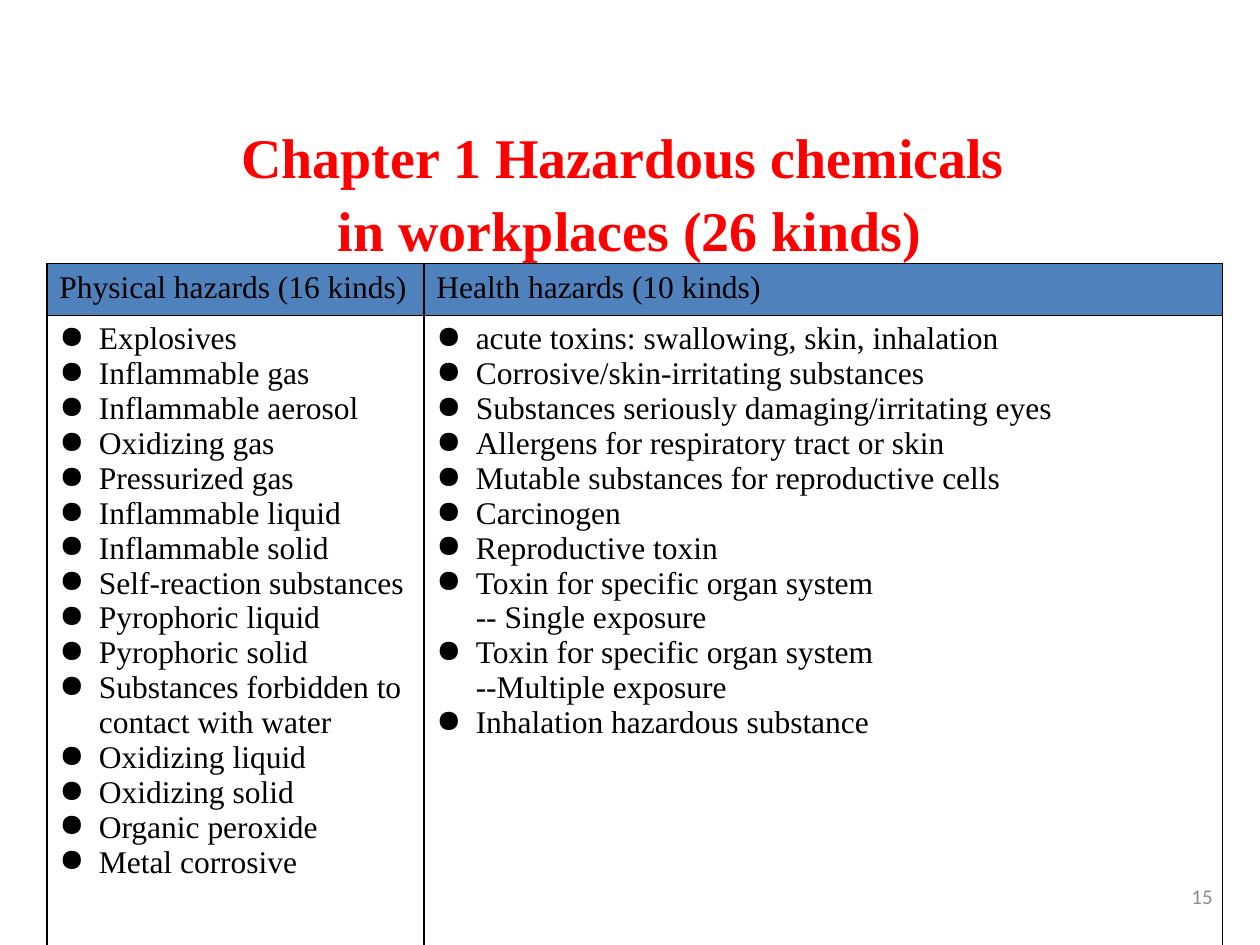
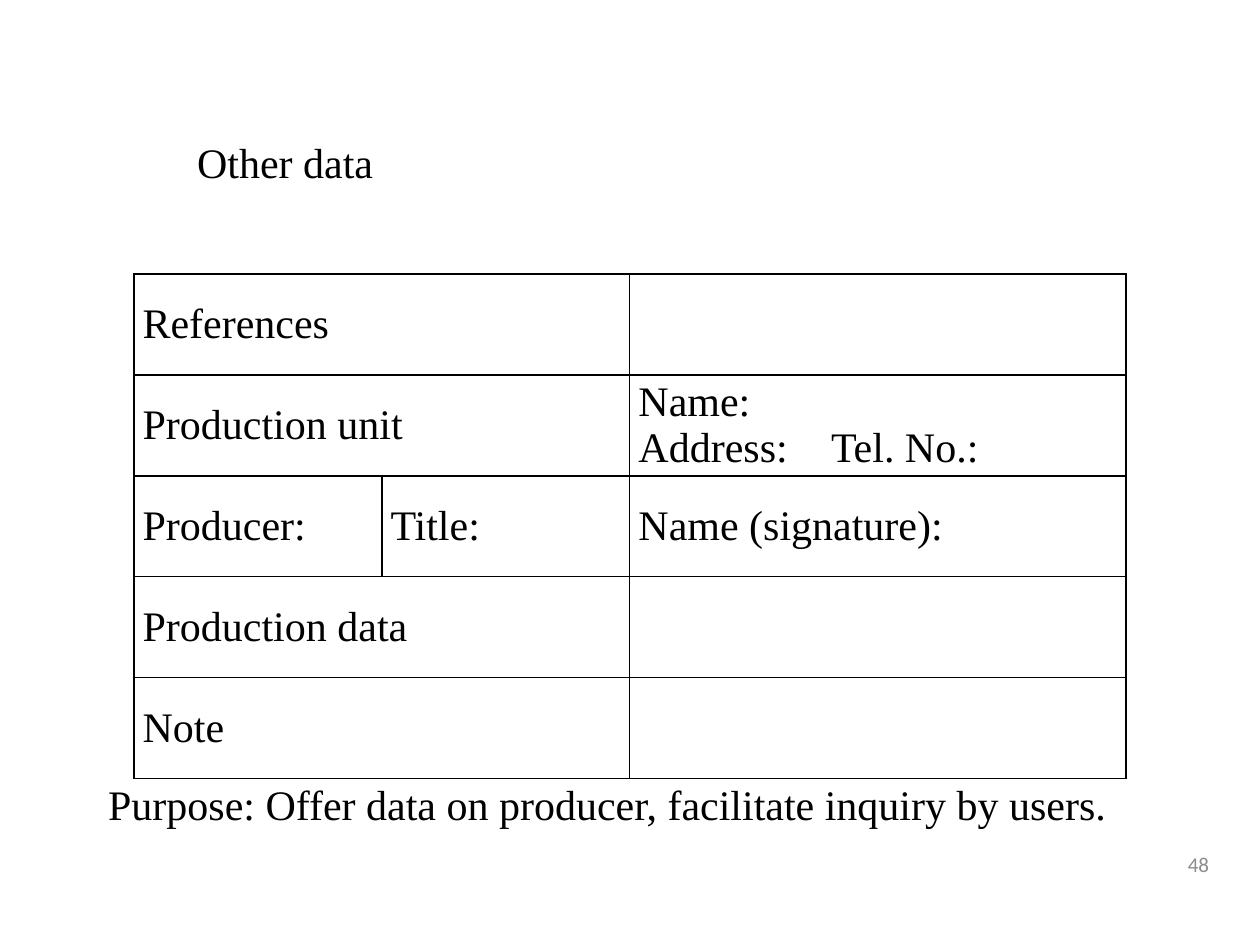
from dataclasses import dataclass
from typing import Optional

from lxml import etree
from pptx import Presentation
from pptx import util as u
from pptx.dml import color
from pptx.enum import text
from pptx.oxml import ns


@dataclass(frozen=True)
class Theme:
    serif: str = "Times New Roman"
    sans: str = "Calibri"
    black: str = "000000"
    red: str = "FF0000"
    grey: str = "8C8C8C"
    header_blue: str = "4F81BD"
    white: str = "FFFFFF"
    title_size: float = 32
    form_size: float = 24
    list_size: float = 18
    number_size: float = 12
    border_width: float = 1
    list_indent: float = 22.5
    tel_tab: float = 110


THEME = Theme()


@dataclass(frozen=True)
class Style:
    size: float
    colour: str = THEME.black
    font: str = THEME.serif
    bold: bool = False
    align: text.PP_ALIGN = text.PP_ALIGN.LEFT
    spacing: Optional[float] = None


TITLE = Style(THEME.title_size, THEME.red, bold=True,
              align=text.PP_ALIGN.CENTER, spacing=1.08)
FORM = Style(THEME.form_size)
LIST = Style(THEME.list_size)
NUMBER = Style(THEME.number_size, THEME.grey, THEME.sans,
               align=text.PP_ALIGN.RIGHT)


@dataclass(frozen=True)
class Line:
    words: str
    bullet: bool = False
    indent: float = 0
    tab: float = 0


@dataclass(frozen=True)
class Box:
    left: float
    top: float
    width: float
    height: float

    def lengths(self) -> tuple:
        return tuple(u.Pt(v) for v in (self.left, self.top, self.width, self.height))


@dataclass(frozen=True)
class TextBlock:
    box: Box
    lines: tuple
    style: Style
    wrap: bool = True


@dataclass(frozen=True)
class CellLook:
    fill: Optional[str] = None
    anchor: text.MSO_ANCHOR = text.MSO_ANCHOR.TOP
    margin_x: float = 7.2
    margin_y: float = 3.6


HEADER_CELL = CellLook(THEME.header_blue)
LIST_CELL = CellLook(THEME.white)
FORM_CELL = CellLook(anchor=text.MSO_ANCHOR.MIDDLE, margin_x=5, margin_y=0)


# Text
def write_lines(frame, lines: tuple, style: Style) -> None:
    for index, line in enumerate(lines):
        paragraph = frame.paragraphs[0] if index == 0 else frame.add_paragraph()
        properties = paragraph._p.get_or_add_pPr()
        if line.indent:
            properties.set("marL", str(u.Pt(line.indent)))
        if line.bullet:
            properties.set("indent", str(-u.Pt(line.indent)))
            etree.SubElement(properties, ns.qn("a:buChar"), char="●")
        if line.tab:
            tabs = etree.SubElement(properties, ns.qn("a:tabLst"))
            etree.SubElement(tabs, ns.qn("a:tab"), pos=str(u.Pt(line.tab)), algn="l")
        paragraph.alignment = style.align
        if style.spacing:
            paragraph.line_spacing = style.spacing
        run = paragraph.add_run()
        run.text = line.words
        run.font.name = style.font
        run.font.size = u.Pt(style.size)
        run.font.bold = style.bold
        run.font.color.rgb = color.RGBColor.from_string(style.colour)


def draw_text(slide, block: TextBlock) -> None:
    frame = slide.shapes.add_textbox(*block.box.lengths()).text_frame
    frame.word_wrap = block.wrap
    frame.vertical_anchor = text.MSO_ANCHOR.MIDDLE
    write_lines(frame, block.lines, block.style)


# Tables
def draw_borders(cell) -> None:
    properties = cell._tc.get_or_add_tcPr()
    for side in ("lnL", "lnR", "lnT", "lnB"):
        border = etree.SubElement(properties, ns.qn(f"a:{side}"),
                                  w=str(u.Pt(THEME.border_width)))
        fill = etree.SubElement(border, ns.qn("a:solidFill"))
        etree.SubElement(fill, ns.qn("a:srgbClr"), val=THEME.black)


def dress_cell(cell, look: CellLook) -> None:
    draw_borders(cell)
    if look.fill:
        cell.fill.solid()
        cell.fill.fore_color.rgb = color.RGBColor.from_string(look.fill)
    else:
        cell.fill.background()
    cell.vertical_anchor = look.anchor
    cell.margin_left = cell.margin_right = u.Pt(look.margin_x)
    cell.margin_top = cell.margin_bottom = u.Pt(look.margin_y)


def draw_table(slide, left: float, top: float, widths: tuple, heights: tuple,
               rows: tuple, looks: tuple, style: Style):
    """Each row holds one tuple of lines per cell."""
    box = Box(left, top, sum(widths), sum(heights))
    table = slide.shapes.add_table(len(heights), len(widths), *box.lengths()).table
    table.first_row = table.horz_banding = False
    for column, width in zip(table.columns, widths):
        column.width = u.Pt(width)
    for r, (height, contents, look) in enumerate(zip(heights, rows, looks)):
        table.rows[r].height = u.Pt(height)
        for c, lines in enumerate(contents):
            dress_cell(table.cell(r, c), look)
            write_lines(table.cell(r, c).text_frame, lines, style)
    return table


# Hazard lists
PHYSICAL_HAZARDS = (
    "Explosives", "Inflammable gas", "Inflammable aerosol", "Oxidizing gas",
    "Pressurized gas", "Inflammable liquid", "Inflammable solid",
    "Self-reaction substances", "Pyrophoric liquid", "Pyrophoric solid",
    "Substances forbidden to contact with water", "Oxidizing liquid",
    "Oxidizing solid", "Organic peroxide", "Metal corrosive",
)
HEALTH_HAZARDS = (
    "acute toxins: swallowing, skin, inhalation",
    "Corrosive/skin-irritating substances",
    "Substances seriously damaging/irritating eyes",
    "Allergens for respiratory tract or skin",
    "Mutable substances for reproductive cells",
    "Carcinogen", "Reproductive toxin",
    "Toxin for specific organ system", "-- Single exposure",
    "Toxin for specific organ system", "--Multiple exposure",
    "Inhalation hazardous substance",
)


def hazard_lines(hazards: tuple) -> tuple:
    """Entries that open with dashes continue the bullet above."""
    return tuple(Line(hazard, bullet=not hazard.startswith("--"),
                      indent=THEME.list_indent) for hazard in hazards)


def draw_page_number(slide, number: int, left: float, top: float) -> None:
    draw_text(slide, TextBlock(Box(left, top, 168, 28.8), (Line(str(number)),), NUMBER))


# Slide: hazardous chemicals
def build_hazards(slide) -> None:
    draw_text(slide, TextBlock(
        Box(0, 66, 720, 85),
        (Line("Chapter 1 Hazardous chemicals "), Line("in workplaces (26 kinds)")),
        TITLE))
    headings = ((Line("Physical hazards (16 kinds)"),),
                (Line("Health hazards (10 kinds)"),))
    lists = (hazard_lines(PHYSICAL_HAZARDS), hazard_lines(HEALTH_HAZARDS))
    draw_table(slide, 26.8, 150.7, (215.4, 456.3), (29.6, 367.2),
               (headings, lists), (HEADER_CELL, LIST_CELL), LIST)
    draw_page_number(slide, 15, 532, 497.5)


# Slide: other data
def build_other_data(slide) -> None:
    draw_page_number(slide, 48, 530, 479.5)
    empty = ()
    rows = (
        ((Line("References"),), empty, empty),
        ((Line("Production unit"),), empty,
         (Line("Name:"), Line("Address:\tTel. No.:", tab=THEME.tel_tab))),
        ((Line("Producer:"),), (Line("Title:"),), (Line("Name (signature):"),)),
        ((Line("Production data"),), empty, empty),
        ((Line("Note"),), empty, empty),
    )
    form = draw_table(slide, 76.5, 156.7, (141.7, 141.7, 283.5), (57.6,) * len(rows),
                      rows, (FORM_CELL,) * len(rows), FORM)
    for r, (_, middle, _) in enumerate(rows):
        if not middle:
            form.cell(r, 0).merge(form.cell(r, 1))
    draw_text(slide, TextBlock(Box(105.6, 74.2, 116, 36), (Line("Other data"),),
                               FORM, wrap=False))
    draw_text(slide, TextBlock(
        Box(54.7, 441.4, 643, 36),
        (Line("Purpose: Offer data on producer, facilitate inquiry by users."),), FORM))


def main() -> None:
    deck = Presentation()
    deck.slide_width, deck.slide_height = u.Pt(720), u.Pt(540)
    blank = deck.slide_layouts[6]
    for build in (build_hazards, build_other_data):
        build(deck.slides.add_slide(blank))
    deck.save("out.pptx")


if __name__ == "__main__":
    main()
